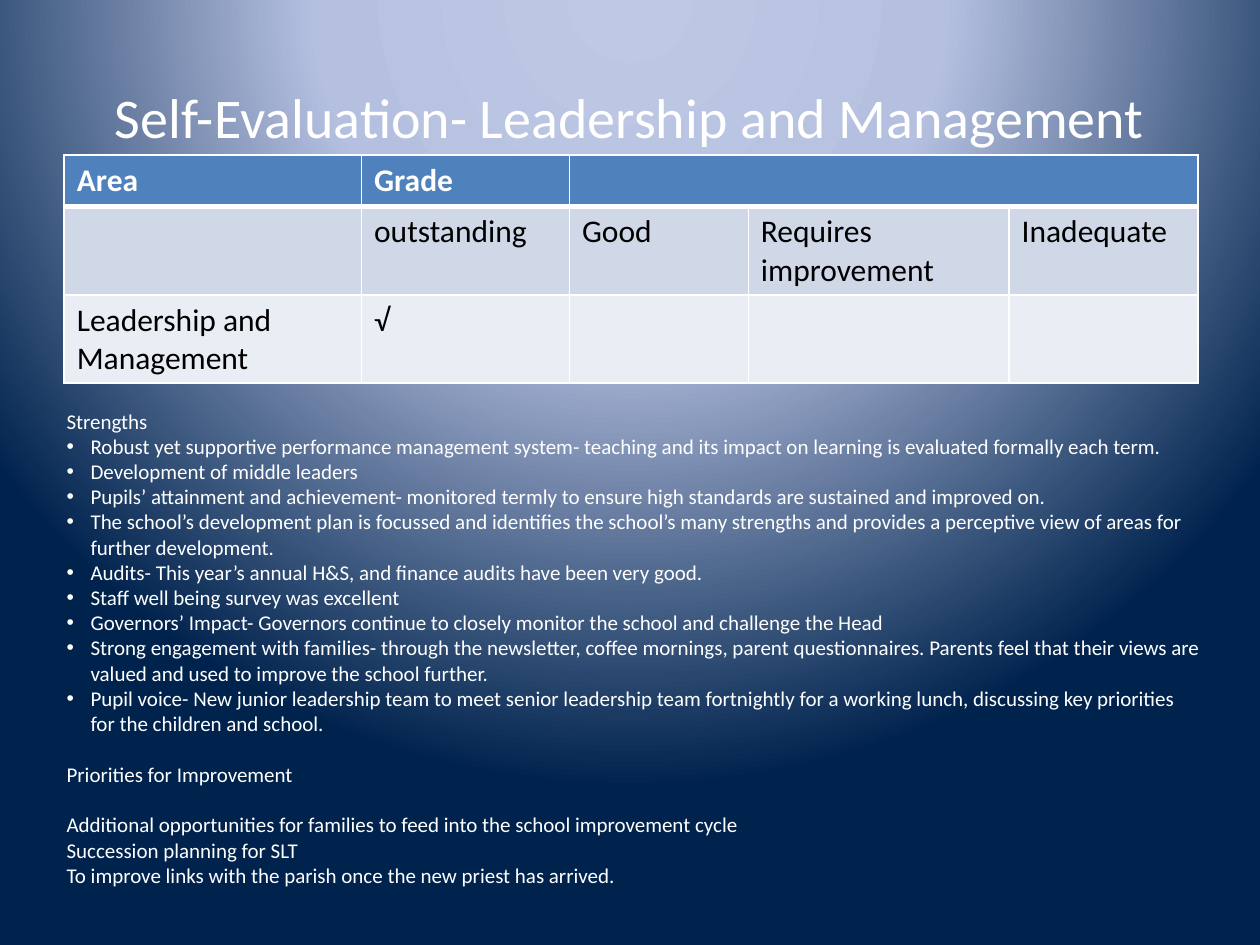
from pptx import Presentation
from pptx import util as u
from pptx.dml.color import RGBColor
from pptx.enum import text
from pptx.oxml import parse_xml
from pptx.oxml.ns import nsdecls, qn

# Content
TITLE = "Self-Evaluation- Leadership and Management"
GRADES = [
    ["Area", "Grade", "", "", ""],
    ["", "outstanding", "Good", "Requires improvement", "Inadequate"],
    ["Leadership and Management", "√", "", "", ""],
]
STRENGTHS = [
    "Robust yet supportive performance management system- teaching and its impact on learning is evaluated formally each term.",
    "Development of middle leaders",
    "Pupils’ attainment and achievement- monitored termly to ensure high standards are sustained and improved on.",
    "The school’s development plan is focussed and identifies the school’s many strengths and provides a perceptive view of areas for further development.",
    "Audits- This year’s annual H&S, and finance audits have been very good.",
    "Staff well being survey was excellent",
    "Governors’ Impact- Governors continue to closely monitor the school and challenge the Head",
    "Strong engagement with families- through the newsletter, coffee mornings, parent questionnaires. Parents feel that their views are valued and used to improve the school further.",
    "Pupil voice- New junior leadership team to meet senior leadership team fortnightly for a working lunch, discussing key priorities for the children and school.",
]
PRIORITIES = [
    "Additional opportunities for families to feed into the school improvement cycle",
    "Succession planning for SLT",
    "To improve links with the parish once the new priest has arrived.",
]

# Style
COLORS = {"light": "FFFFFF", "dark": "000000", "header": "4F81BD",
          "band": "D0D8E8", "pale": "E9EDF4"}
GLOW = [(0, "BFC9E5"), (40, "B5C0E0"), (100, "00234D")]
ROW_FILLS = ["header", "band", "pale"]
FONT = "Calibri"
COL_WIDTHS = [2.36, 1.65, 1.42, 2.07, 1.5]
ROW_HEIGHTS = [0.41, 0.7, 0.7]
SECTION_GAP = 14.6
INDENT = u.Inches(0.19)


def rgb(name):
    return RGBColor.from_string(COLORS[name])


def add_run(paragraph, words, size, color="light", bold=False):
    run = paragraph.add_run()
    run.text = words
    run.font.name = FONT
    run.font.size = u.Pt(size)
    run.font.bold = bold
    run.font.color.rgb = rgb(color)


def add_frame(slide, *box):
    frame = slide.shapes.add_textbox(*map(u.Inches, box)).text_frame
    frame.word_wrap = True
    return frame


def add_bullet(paragraph):
    props = paragraph._p.get_or_add_pPr()
    props.set("marL", str(INDENT))
    props.set("indent", str(-INDENT))
    props.append(parse_xml(f'<a:buFont {nsdecls("a")} typeface="Arial"/>'))
    props.append(parse_xml(f'<a:buChar {nsdecls("a")} char="•"/>'))


def set_borders(cell, row):
    weights = {"L": 1, "R": 1, "T": 3 if row == 1 else 1, "B": 3 if row == 0 else 1}
    for side, weight in weights.items():
        cell._tc.get_or_add_tcPr().append(parse_xml(
            f'<a:ln{side} {nsdecls("a")} w="{u.Pt(weight)}"><a:solidFill>'
            f'<a:srgbClr val="{COLORS["light"]}"/></a:solidFill></a:ln{side}>'))


def set_glow(slide):
    slide.background.fill.solid()
    props = slide.element.find(".//" + qn("p:bgPr"))
    stops = "".join(f'<a:gs pos="{pos * 1000}"><a:srgbClr val="{color}"/></a:gs>'
                    for pos, color in GLOW)
    props.replace(props[0], parse_xml(
        f'<a:gradFill {nsdecls("a")} rotWithShape="1"><a:gsLst>{stops}</a:gsLst>'
        '<a:path path="circle"><a:fillToRect l="50000" t="-80000" r="50000" b="180000"/>'
        '</a:path></a:gradFill>'))


prs = Presentation()
prs.slide_width, prs.slide_height = u.Inches(10), u.Inches(7.5)
slide = prs.slides.add_slide(prs.slide_layouts[6])
set_glow(slide)

# Title
heading = add_frame(slide, 0.5, 0.3, 9, 1.25)
heading.vertical_anchor = text.MSO_ANCHOR.MIDDLE
heading.paragraphs[0].alignment = text.PP_ALIGN.CENTER
add_run(heading.paragraphs[0], TITLE, 32)

# Grade table
grades = slide.shapes.add_table(
    len(ROW_HEIGHTS), len(COL_WIDTHS), u.Inches(0.51), u.Inches(1.23),
    u.Inches(sum(COL_WIDTHS)), u.Inches(sum(ROW_HEIGHTS))).table
for column, width in zip(grades.columns, COL_WIDTHS):
    column.width = u.Inches(width)
for r, labels in enumerate(GRADES):
    grades.rows[r].height = u.Inches(ROW_HEIGHTS[r])
    for c, label in enumerate(labels):
        cell = grades.cell(r, c)
        set_borders(cell, r)
        cell.fill.solid()
        cell.fill.fore_color.rgb = rgb(ROW_FILLS[r])
        if label:
            add_run(cell.text_frame.paragraphs[0], label, 18,
                    "light" if r == 0 else "dark", bold=r == 0)
grades.cell(0, 2).merge(grades.cell(0, 4))

# Strengths and priorities: (words, bulleted, space before)
lines = [("Strengths", False, 0)]
lines += [(strength, True, 0) for strength in STRENGTHS]
lines += [("Priorities for Improvement", False, SECTION_GAP)]
lines += [(priority, False, 0 if i else SECTION_GAP)
          for i, priority in enumerate(PRIORITIES)]

evaluation = add_frame(slide, 0.43, 3.19, 9.21, 4.14)
for i, (words, bulleted, gap) in enumerate(lines):
    paragraph = evaluation.add_paragraph() if i else evaluation.paragraphs[0]
    if bulleted:
        add_bullet(paragraph)
    if gap:
        paragraph.space_before = u.Pt(gap)
    add_run(paragraph, words, 12)

prs.save("out.pptx")
